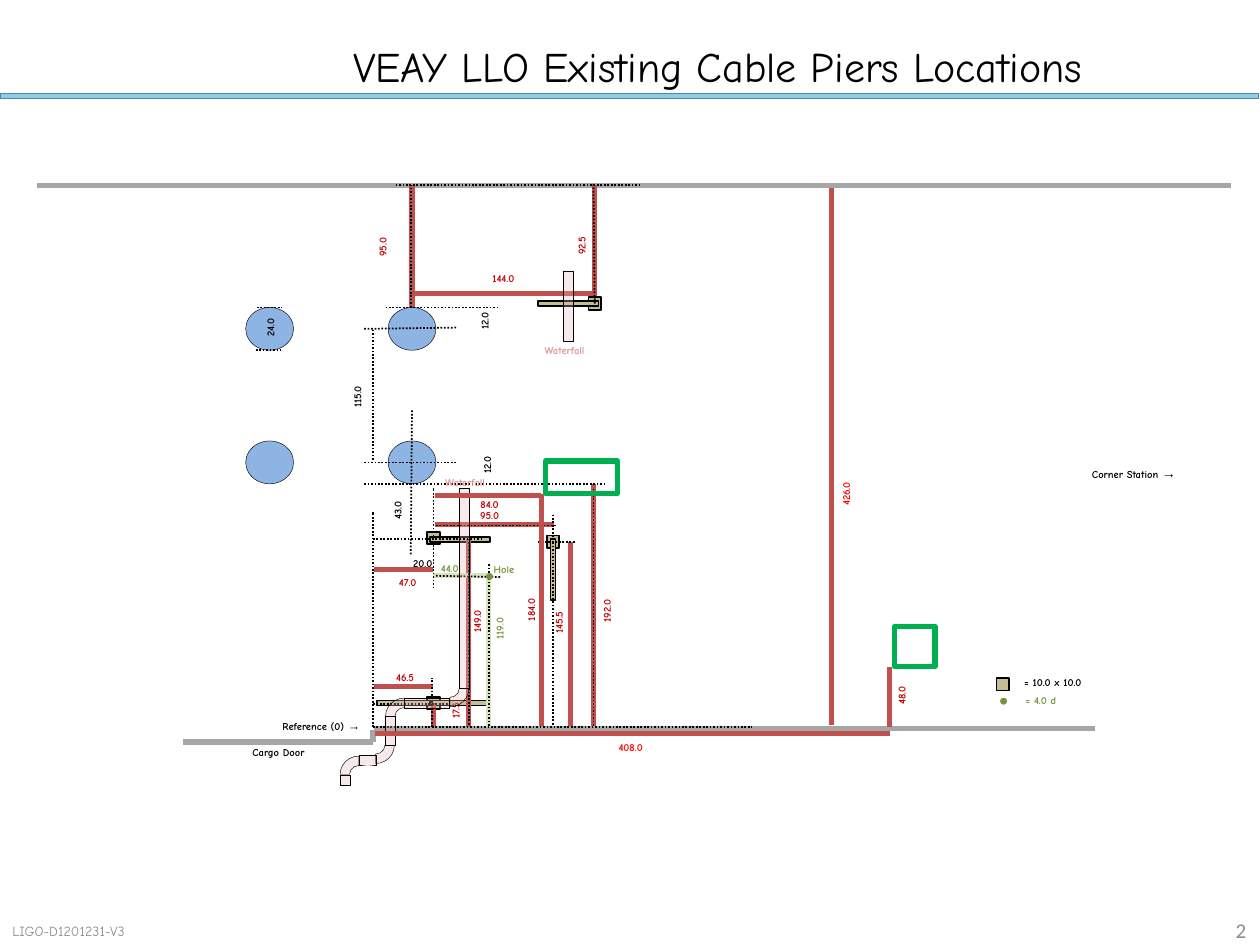
from lxml import etree
from pptx import Presentation
from pptx import util as u
from pptx.dml.color import RGBColor
from pptx.enum import dml, shapes, text
from pptx.oxml.ns import qn

PX = 9144  # 100 px to the inch
FONT = "Comic Neue"
BLACK, RED, BRIGHT_RED, GREEN, ROSE = "000000", "C00000", "FF0000", "77933C", "D99694"
DIM, WALL, HOLE_DIM, PIER, PIPE, GRAY = "C0504D", "A6A6A6", "D7E4BD", "C4BD97", "E6B9B8", "8C8C8C"
RECT, OVAL, ARC = (shapes.MSO_SHAPE.RECTANGLE, shapes.MSO_SHAPE.OVAL,
                   shapes.MSO_SHAPE.BLOCK_ARC)

WALLS = [(297, 578, 869, 578), (296, 589, 296, 579), (145, 589, 296, 589),
         (29, 147, 977, 147)]
PIER_DIMENSIONS = [
    (297, 452, 344, 452), (297, 545, 344, 545), (344, 558, 344, 576),
    (453, 430, 453, 576), (345, 416, 440, 416), (660, 149, 660, 575),
    (472, 147, 472, 240), (327, 147, 327, 244), (471, 233, 327, 233),
    (372, 428, 372, 577), (471, 384, 471, 576)]
ROOM_DIMENSIONS = [(706, 582, 298, 582), (706, 529, 706, 577),
                   (430, 392, 430, 576), (345, 393, 429, 393)]
HOLE_DIMENSIONS = [(388, 458, 388, 577), (344, 457, 388, 457)]
GUIDES = [
    (388, 576, 388, 447), (296, 559, 356, 559), (343, 577, 343, 538),
    (296, 577, 597, 577), (314, 147, 507, 147), (296, 577, 296, 406),
    (344, 467, 344, 387), (372, 575, 372, 428), (346, 417, 441, 417),
    (289, 384, 481, 384), (296, 365, 296, 261), (289, 261, 362, 260),
    (289, 367, 362, 367), (471, 576, 471, 388), (326, 244, 326, 147),
    (326, 440, 327, 325), (203, 278, 223, 278), (204, 244, 224, 244),
    (397, 458, 345, 457)]
UPPER_GUIDES = [(296, 428, 384, 428), (439, 575, 439, 409), (456, 430, 427, 430),
                (472, 241, 471, 145), (306, 244, 396, 244)]

# text, left, top, width, colour
ACROSS_LABELS = [
    ("46.5", 292, 528, 59, RED), ("95.0", 359, 399, 59, RED),
    ("47.0", 294, 452, 59, RED), ("144.0", 370, 211, 59, RED),
    ("84.0", 359, 390, 59, RED), ("408.0", 471, 583, 59, BRIGHT_RED),
    ("20.0", 306, 437, 59, BLACK), ("Cargo Door", 172, 587, 98, BLACK),
    ("44.0", 330, 441, 54, GREEN), ("Hole", 373, 442, 54, GREEN),
    ("= 10.0 x 10.0", 796, 532, 79, BLACK), ("= 4.0 d", 799, 546, 54, GREEN),
    ("Waterfall", 330, 373, 78, ROSE), ("Waterfall", 409, 268, 78, ROSE)]
UPRIGHT_LABELS = [
    ("17.5", 332, 554, 59, RED), ("95.0", 274, 186, 59, RED),
    ("92.5", 432, 185, 59, RED), ("426.0", 642, 382, 59, BRIGHT_RED),
    ("149.0", 349, 483, 59, RED), ("145.5", 414, 484, 59, RED),
    ("192.0", 452, 475, 59, RED), ("184.0", 392, 474, 59, RED),
    ("48.0", 686, 542, 59, RED), ("119.0", 367, 489, 59, GREEN),
    ("115.0", 254, 305, 59, BLACK), ("24.0", 190, 250, 49, BLACK),
    ("12.0", 362, 359, 49, BLACK), ("12.0", 360, 245, 49, BLACK),
    ("43.0", 291, 395, 49, BLACK)]

# left, top, width, height, rotation
PIPE_RUNS = [(321, 554, 36, 8, 0), (285, 599, 14, 8, 0), (298, 576, 23, 8, 270),
             (289, 463, 159, 8, 270), (270, 615, 8, 8, 270), (423, 239, 56, 8, 270)]
PIPE_BENDS = [(306, 554, 0), (283, 577, 180), (342, 532, 180), (270, 600, 0)]


def color(value):
    return RGBColor.from_string(value)


def px(*lengths):
    return [u.Emu(length * PX) for length in lengths]


def add_solid(slide, kind, box, fill, line, width=1, rotation=0, alpha=None):
    """Add a preset shape; without a fill colour only its outline shows."""
    shape = slide.shapes.add_shape(kind, *px(*box))
    shape.shadow.inherit = False
    shape.rotation = rotation
    shape.line.color.rgb = color(line)
    shape.line.width = u.Pt(width)
    if fill is None:
        shape.fill.background()
        return shape
    shape.fill.solid()
    shape.fill.fore_color.rgb = color(fill)
    if alpha:
        tint = shape.fill._xPr.find(".//" + qn("a:srgbClr"))
        etree.SubElement(tint, qn("a:alpha"), val=str(alpha * 1000))
    return shape


def add_lines(slide, ends, tone, width=3, dash=None):
    for points in ends:
        line = slide.shapes.add_connector(shapes.MSO_CONNECTOR.STRAIGHT, *px(*points))
        line.line.color.rgb = color(tone)
        line.line.width = u.Pt(width)
        if dash:
            line.line.dash_style = dash
        etree.SubElement(line._element.spPr, qn("a:effectLst"))


def add_guides(slide, ends):
    add_lines(slide, ends, BLACK, 1, dml.MSO_LINE.ROUND_DOT)


def format_paragraph(paragraph, size, tone, align, bold=False, font=FONT):
    paragraph.alignment = align
    paragraph.font.size = u.Pt(size)
    paragraph.font.name = font
    paragraph.font.bold = bold
    paragraph.font.color.rgb = color(tone)


def add_label(slide, words, left, top, width, tone=BLACK, rotation=0, height=20):
    label = slide.shapes.add_textbox(*px(left, top, width, height))
    label.rotation = rotation
    label.text_frame.word_wrap = True
    label.text_frame.auto_size = text.MSO_AUTO_SIZE.SHAPE_TO_FIT_TEXT
    paragraph = label.text_frame.paragraphs[0]
    paragraph.add_run().text = words
    format_paragraph(paragraph, 6, tone, text.PP_ALIGN.CENTER, bold=True)
    return paragraph


def add_pointer(slide, words, left, top, width, height, arrow_size):
    """Add a label that ends in an arrow."""
    arrow = add_label(slide, words + " ", left, top, width, height=height).add_run()
    arrow.text = "→"
    arrow.font.name = "Arial"
    arrow.font.size = u.Pt(arrow_size)
    arrow.font.bold = False


def add_footer(slide, words, box, size, align, font=FONT):
    footer = slide.shapes.add_textbox(*px(*box)).text_frame
    footer.word_wrap = True
    footer.vertical_anchor = text.MSO_ANCHOR.MIDDLE
    footer.text = words
    format_paragraph(footer.paragraphs[0], size, GRAY, align, font=font)


def add_title(slide, words):
    title = slide.shapes.title
    title.left, title.top, title.width, title.height = px(189, 30, 761, 44)
    title.text_frame.text = words
    title.text_frame.vertical_anchor = text.MSO_ANCHOR.MIDDLE
    format_paragraph(title.text_frame.paragraphs[0], 24, BLACK, text.PP_ALIGN.CENTER)


def add_pier(slide, left, top, arms, rotation=0):
    """Add a square pier base with its cable arms."""
    add_solid(slide, RECT, (left, top, 10, 10), PIER, BLACK)
    for arm_left, arm_top in arms:
        add_solid(slide, RECT, (arm_left, arm_top, 48, 4), PIER, BLACK, rotation=rotation)


def add_dot(slide, left, top):
    add_solid(slide, OVAL, (left, top, 5, 5), GREEN, GREEN, 0.25)


def add_pipes(slide):
    for left, top, rotation in PIPE_BENDS:
        bend = add_solid(slide, ARC, (left, top, 30, 29), PIPE, BLACK, 0.25, rotation, 30)
        for index, value in enumerate((108, 161.75, 0.26)):
            bend.adjustments[index] = value
    for *box, rotation in PIPE_RUNS:
        add_solid(slide, RECT, box, PIPE, BLACK, 0.25, rotation, 30)


def main():
    deck = Presentation()
    deck.slide_width, deck.slide_height = px(1000, 750)
    slide = deck.slides.add_slide(deck.slide_layouts[5])
    add_title(slide, "VEAY LLO Existing Cable Piers Locations")
    add_solid(slide, RECT, (0, 74, 999, 4), "93CDDD", "4F81BD", 0.75)
    add_footer(slide, "LIGO-D1201231-V3", (0, 729, 139, 20), 8, text.PP_ALIGN.LEFT)
    add_footer(slide, "2", (926, 727, 73, 22), 12, text.PP_ALIGN.RIGHT, "Calibri")

    add_lines(slide, WALLS, WALL)
    add_pier(slide, 339, 422, [(341, 426)])
    add_pier(slide, 339, 553, [(299, 556), (341, 556)])
    add_lines(slide, PIER_DIMENSIONS, DIM)
    add_lines(slide, HOLE_DIMENSIONS, HOLE_DIM)
    for left in (195, 308):
        for top in (244, 350):
            add_solid(slide, OVAL, (left, top, 38, 34), "8EB4E3", BLACK, 0.25)
    add_guides(slide, GUIDES)
    add_dot(slide, 386, 455)

    add_solid(slide, RECT, (791, 538, 10, 10), PIER, BLACK)
    add_dot(slide, 794, 554)
    for label in ACROSS_LABELS:
        add_label(slide, *label)
    for label in UPRIGHT_LABELS:
        add_label(slide, *label, rotation=270)
    add_pointer(slide, "Corner Station", 837, 364, 126, 24, 8)
    add_pointer(slide, "Reference (0)", 206, 565, 98, 22, 7)

    add_pier(slide, 434, 425, [(415, 450)], 270)
    add_pier(slide, 467, 236, [(427, 239)])
    add_pipes(slide)
    add_guides(slide, UPPER_GUIDES)
    add_lines(slide, ROOM_DIMENSIONS, DIM)
    for box in ((433, 366, 57, 26), (710, 497, 32, 32)):
        add_solid(slide, RECT, box, None, "00B050", 3)
    deck.save("out.pptx")


if __name__ == "__main__":
    main()
